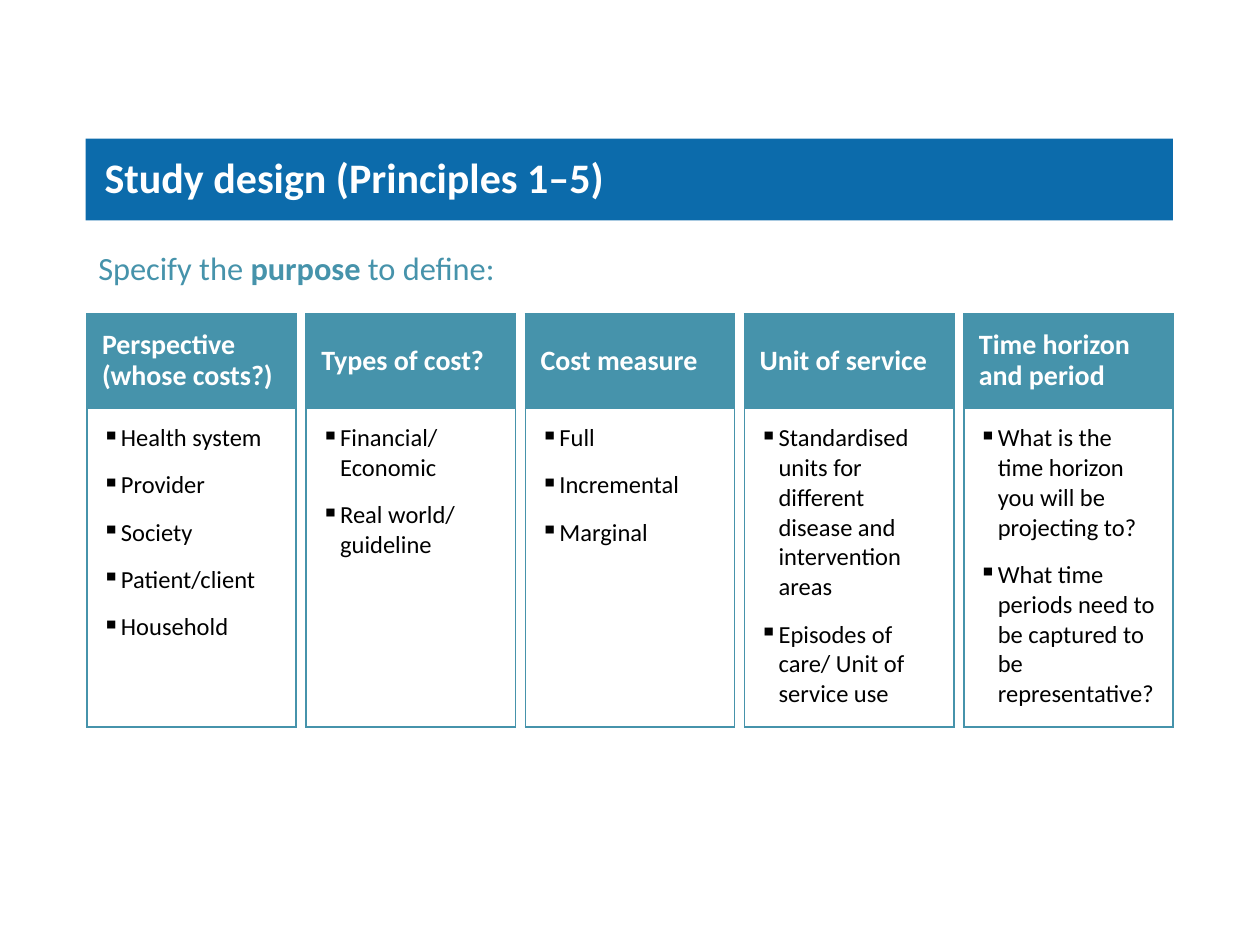
"""Build the study design slide with its five principle columns."""
import pptx
import pptx.dml.color
import pptx.enum.text
import pptx.oxml
import pptx.oxml.ns
import pptx.util

Inches = pptx.util.Inches
Pt = pptx.util.Pt
BLUE = pptx.dml.color.RGBColor(0x0C, 0x6B, 0xAB)
TEAL = pptx.dml.color.RGBColor(0x46, 0x93, 0xAB)
WHITE = pptx.dml.color.RGBColor(0xFF, 0xFF, 0xFF)
BLACK = pptx.dml.color.RGBColor(0x00, 0x00, 0x00)
LEFT = pptx.enum.text.PP_ALIGN.LEFT
TOP = pptx.enum.text.MSO_ANCHOR.TOP
MIDDLE = pptx.enum.text.MSO_ANCHOR.MIDDLE
NAMESPACE = pptx.oxml.ns.nsdecls("a")

COLUMNS = [
    ("Perspective (whose costs?)",
     ["Health system", "Provider", "Society", "Patient/client", "Household"]),
    ("Types of cost?", ["Financial/ Economic", "Real world/ guideline"]),
    ("Cost measure", ["Full", "Incremental", "Marginal"]),
    ("Unit of service",
     ["Standardised units for different disease and intervention areas",
      "Episodes of care/ Unit of service use"]),
    ("Time horizon and period",
     ["What is the time horizon you will be projecting to?",
      "What time periods need to be captured to be representative?"]),
]


class SlideBuilder:
    TITLE = {"size": Pt(24), "bold": True, "color": WHITE}
    LEAD = {"size": Pt(18.5), "bold": False, "color": TEAL}
    HEADING = {"size": Pt(16), "bold": True, "color": WHITE}
    ITEM = {"size": Pt(14), "bold": False, "color": BLACK}

    def __init__(self, slide):
        self.slide = slide

    def place(self, shape, left, top, width, height):
        box = {"left": left, "top": top, "width": width, "height": height}
        for name, value in box.items():
            setattr(shape, name, Inches(value))

    def add_text(self, paragraph, text, style, **changes):
        run = paragraph.add_run()
        run.text = text
        values = {"name": "Calibri", **style, **changes}
        run.font.color.rgb = values.pop("color")
        for name, value in values.items():
            setattr(run.font, name, value)

    def set_bullet(self, paragraph, symbol=None, indent=0):
        properties = paragraph._p.get_or_add_pPr()
        properties.set("marL", str(Inches(indent)))
        properties.set("indent", str(-Inches(indent)))
        bullet = f'<a:buChar {NAMESPACE} char="{symbol}"/>' if symbol else f"<a:buNone {NAMESPACE}/>"
        properties.append(pptx.oxml.parse_xml(bullet))

    def add_title(self, text):
        title = self.slide.shapes.title
        self.place(title, 0.68, 1.1, 8.63, 0.65)
        title.fill.solid()
        title.fill.fore_color.rgb = BLUE
        frame = title.text_frame
        frame_format = {
            "margin_left": Inches(0.15), "margin_right": Inches(0.1),
            "margin_top": Inches(0.1), "margin_bottom": Inches(0.1),
            "vertical_anchor": MIDDLE, "word_wrap": False,
            "auto_size": pptx.enum.text.MSO_AUTO_SIZE.NONE,
        }
        for name, value in frame_format.items():
            setattr(frame, name, value)
        paragraph = frame.paragraphs[0]
        paragraph.alignment = LEFT
        paragraph.line_spacing = 0.9
        self.add_text(paragraph, text, self.TITLE)

    def add_lead(self, parts):
        body = self.slide.placeholders[1]
        self.place(body, 0.68, 2, 8.61, 0.36)
        body.text_frame.auto_size = pptx.enum.text.MSO_AUTO_SIZE.NONE
        paragraph = body.text_frame.paragraphs[0]
        self.set_bullet(paragraph)
        paragraph.line_spacing = 0.7
        paragraph.space_before = Pt(0)
        for text, bold in parts:
            self.add_text(paragraph, text, self.LEAD, bold=bold)

    def format_cell(self, cell, anchor):
        for side in ("left", "right", "top", "bottom"):
            setattr(cell, f"margin_{side}", Inches(0.12))
        cell.vertical_anchor = anchor
        properties = cell._tc.get_or_add_tcPr()
        for edge in ("lnL", "lnR", "lnT", "lnB"):
            properties.append(pptx.oxml.parse_xml(
                f'<a:{edge} {NAMESPACE} w="{Pt(1)}"><a:solidFill>'
                f'<a:srgbClr val="{TEAL}"/></a:solidFill></a:{edge}>'))

    def add_column(self, left, heading, items):
        frame = self.slide.shapes.add_table(
            2, 1, Inches(left), Inches(2.49), Inches(1.66), Inches(3.28))
        table = frame.table
        table.horz_banding = False
        table.rows[0].height = Inches(0.75)
        table.rows[1].height = Inches(2.53)
        header, body = table.cell(0, 0), table.cell(1, 0)
        self.format_cell(header, MIDDLE)
        self.format_cell(body, TOP)
        header.fill.solid()
        header.fill.fore_color.rgb = TEAL
        body.fill.background()
        paragraph = header.text_frame.paragraphs[0]
        paragraph.line_spacing = 0.9
        self.add_text(paragraph, heading, self.HEADING)
        text_frame = body.text_frame
        for index, item in enumerate(items):
            paragraph = text_frame.add_paragraph() if index else text_frame.paragraphs[0]
            self.set_bullet(paragraph, "▪", 0.15)
            paragraph.space_before = Pt(10 if index else 0)
            self.add_text(paragraph, item, self.ITEM)


def main():
    presentation = pptx.Presentation()
    presentation.slide_width = Inches(10)
    presentation.slide_height = Inches(7.5)
    slide = presentation.slides.add_slide(presentation.slide_layouts[1])
    builder = SlideBuilder(slide)
    builder.add_title("Study design (Principles 1–5)")
    builder.add_lead([("Specify the ", False), ("purpose", True), (" to define:", False)])
    for index, (heading, items) in enumerate(COLUMNS):
        builder.add_column(0.69 + 1.74 * index, heading, items)
    presentation.save("out.pptx")


if __name__ == "__main__":
    main()
